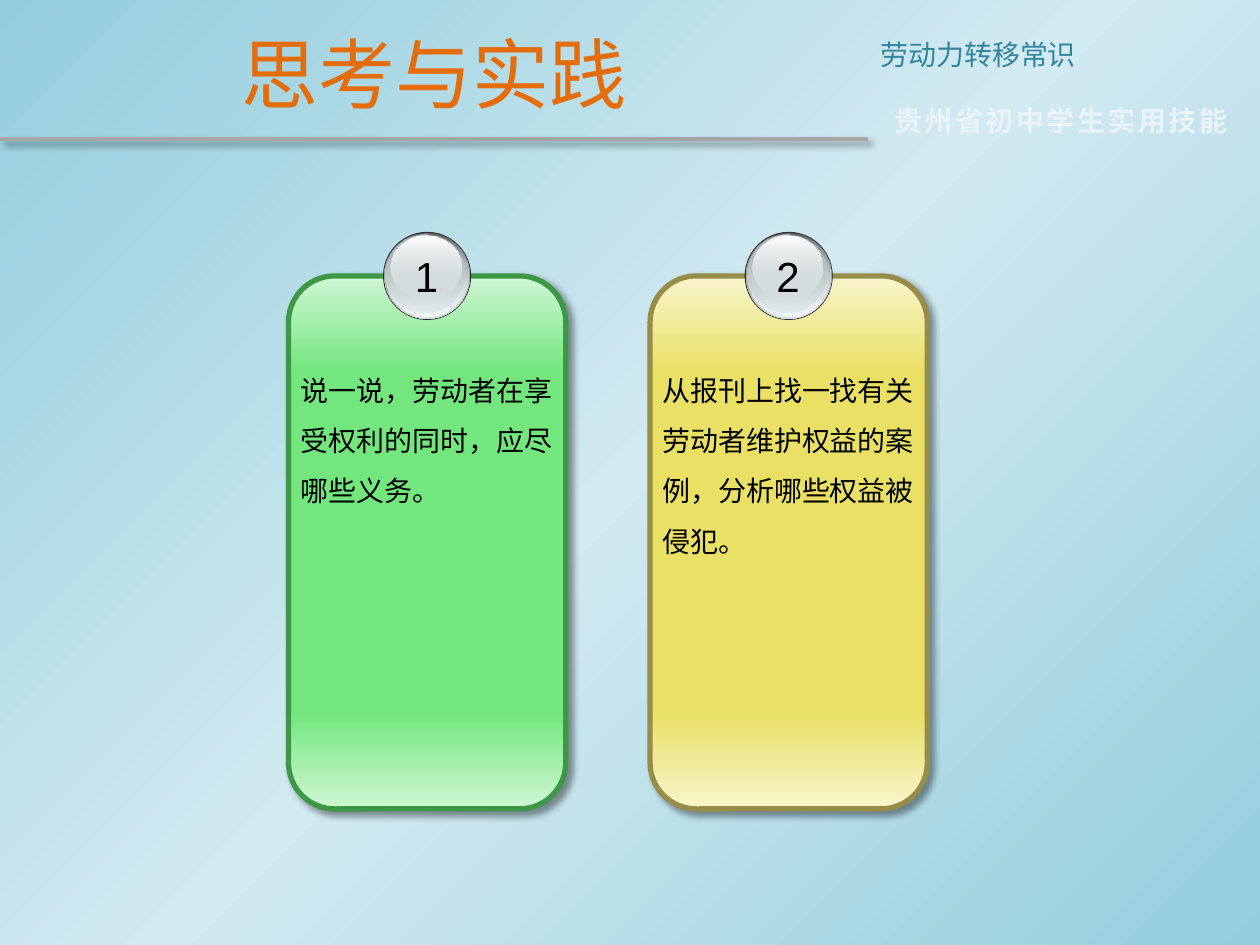
from dataclasses import dataclass

from lxml import etree
from pptx import Presentation
from pptx.dml.color import RGBColor
from pptx.enum.shapes import MSO_CONNECTOR, MSO_SHAPE
from pptx.enum.text import MSO_ANCHOR, MSO_AUTO_SIZE, PP_ALIGN
from pptx.oxml.ns import qn
from pptx.util import Inches, Pt

ROUNDED, OVAL = MSO_SHAPE.ROUNDED_RECTANGLE, MSO_SHAPE.OVAL
STRAIGHT = MSO_CONNECTOR.STRAIGHT
LEFT, CENTER, JUSTIFY = PP_ALIGN.LEFT, PP_ALIGN.CENTER, PP_ALIGN.JUSTIFY
MIDDLE = MSO_ANCHOR.MIDDLE
GROW, FIXED = MSO_AUTO_SIZE.SHAPE_TO_FIT_TEXT, MSO_AUTO_SIZE.NONE

COLS, ROWS = 100, 75
WIDTH, HEIGHT = Inches(10), Inches(7.5)


@dataclass(frozen=True)
class Theme:
    cjk: str = "Noto Sans CJK SC"
    latin: str = "Arial"
    title_size: int = 44
    number_size: int = 24
    body_size: int = 16
    title: str = "E46C0A"
    heading: str = "31859C"
    banner: str = "EAF3F7"
    text: str = "000000"
    rule: str = "A6A6A6"
    rim: str = "333333"
    background: tuple = ((0, "93CDDD"), (50, "D2EAF1"), (100, "93CDDD"))


# Offset from the card's left, then top, width, height and gradient of each layer
BALL_LAYERS = (
    (7.6, 18.5, 6.8, 6.8, ((0, "636869"), (100, "D6E1E2"))),
    (7.7, 18.5, 6.6, 6.6, ((0, "D6E1E2", 0), (100, "F1F5F5"))),
    (7.7, 18.6, 6.3, 6.2, ((0, "AAB2B3"), (100, "D6E1E2", 48))),
    (8.1, 18.7, 5.6, 5.0, ((0, "FFFFFF"), (100, "D6E1E2", 38))),
)

# Edge tint, body colour, border colour, text
CARDS = (
    ("D0F7D4", "73E77E", "3C9844",
     "说一说，劳动者在享受权利的同时，应尽哪些义务。"),
    ("F8F5CC", "E9E065", "978D48",
     "从报刊上找一找有关劳动者维护权益的案例，分析哪些权益被侵犯。"),
)
CARD_LEFT, CARD_STEP, CARD_WIDTH = 22.9, 28.7, 22


def rgb(value):
    return RGBColor.from_string(value)


def add_color(parent, color, alpha=100):
    clr = etree.SubElement(parent, qn("a:srgbClr"), val=color)
    if alpha < 100:
        etree.SubElement(clr, qn("a:alpha"), val=str(alpha * 1000))


def set_gradient(fill, owner, stops, angle=90):
    """Angle runs clockwise; a stop is position, colour and optional opacity."""
    fill.gradient()
    fill.gradient_angle = 360 - angle
    stop_list = owner.find(".//" + qn("a:gsLst"))
    for old in list(stop_list):
        stop_list.remove(old)
    for position, *color in stops:
        stop = etree.SubElement(stop_list, qn("a:gs"), pos=str(position * 1000))
        add_color(stop, *color)


def set_effects(sp, shadow):
    """Call after fill and line, since effects come after them."""
    effects = etree.SubElement(sp._element.spPr, qn("a:effectLst"))
    if shadow:
        outer = etree.SubElement(
            effects, qn("a:outerShdw"), blurRad=str(Pt(4)), dist=str(Pt(3)),
            dir=str(45 * 60000), algn="tl", rotWithShape="0")
        add_color(outer, "000000", 40)


class SlideBuilder:
    def __init__(self, prs, theme):
        self.theme = theme
        self.s = prs.slides.add_slide(prs.slide_layouts[5])
        self.cell_w, self.cell_h = WIDTH / COLS, HEIGHT / ROWS
        background = self.s.background.fill
        set_gradient(background, self.s._element, theme.background, 45)

    def box(self, x, y, w, h):
        return (round(x * self.cell_w), round(y * self.cell_h),
                round(w * self.cell_w), round(h * self.cell_h))

    def fill_text(self, sp, text, size, color, align=LEFT, font=None,
                  bold=False, spacing=None, tracking=0, **frame):
        font = font or self.theme.cjk
        tf = sp.text_frame
        for name, value in frame.items():
            setattr(tf, name, value)
        p = tf.paragraphs[0]
        p.alignment = align
        if spacing:
            p.line_spacing = spacing
        r = p.add_run()
        r.text = text
        formats = {"name": font, "size": Pt(size), "bold": bold}
        for name, value in formats.items():
            setattr(r.font, name, value)
        r.font.color.rgb = rgb(color)
        props = r._r.get_or_add_rPr()
        etree.SubElement(props, qn("a:ea"), typeface=font)
        if tracking:
            props.set("spc", str(round(tracking * 100)))

    def title(self, text, *place):
        sp = self.s.shapes.title
        sp.left, sp.top, sp.width, sp.height = self.box(*place)
        self.fill_text(sp, text, self.theme.title_size, self.theme.title, CENTER,
                       vertical_anchor=MIDDLE, auto_size=FIXED)

    def text(self, text, place, size, color, parent=None, wrap=True, **style):
        sp = (parent or self.s.shapes).add_textbox(*self.box(*place))
        self.fill_text(sp, text, size, color, word_wrap=wrap, auto_size=GROW,
                       **style)

    def rule(self, x1, x2, y):
        start_x, top, end_x, _ = self.box(x1, y, x2, 0)
        line = self.s.shapes.add_connector(STRAIGHT, start_x, top, end_x, top)
        line.line.color.rgb = rgb(self.theme.rule)
        line.line.width = Pt(2.25)
        set_effects(line, shadow=True)

    def shape(self, parent, kind, place, fill, border=None, shadow=False):
        sp = parent.add_shape(kind, *self.box(*place))
        if isinstance(fill, str):
            sp.fill.solid()
            sp.fill.fore_color.rgb = rgb(fill)
        else:
            set_gradient(sp.fill, sp._element, fill)
        if border:
            sp.line.color.rgb = rgb(border)
            sp.line.width = Pt(3)
        else:
            sp.line.fill.background()
        set_effects(sp, shadow)

    def ball(self, parent, x, number):
        self.shape(parent, OVAL, (x + 7.5, 18.4, 7, 7), self.theme.rim)
        for dx, y, w, h, stops in BALL_LAYERS:
            self.shape(parent, OVAL, (x + dx, y, w, h), stops)
        self.text(str(number), (x + 9, 19.4, 3.9, 5), self.theme.number_size,
                  self.theme.text, parent, wrap=False, align=CENTER,
                  font=self.theme.latin)

    def card(self, x, number, edge, body, border, text):
        parent = self.s.shapes.add_group_shape().shapes
        stops = ((0, edge), (18, body), (82, body), (100, edge))
        self.shape(parent, ROUNDED, (x, 21.9, CARD_WIDTH, 42.3), stops, border,
                   shadow=True)
        self.text(text, (x, 27.8, CARD_WIDTH + 0.1, 17.2), self.theme.body_size,
                  self.theme.text, parent, spacing=1.5)
        self.ball(parent, x, number)


def main():
    prs = Presentation()
    prs.slide_width, prs.slide_height = WIDTH, HEIGHT
    theme = Theme()
    slide = SlideBuilder(prs, theme)
    slide.rule(0, 68.9, 11)
    slide.text("劳动力转移常识", (68.9, 2.5, 31.1, 3.7), theme.body_size,
               theme.heading, align=JUSTIFY)
    slide.text("贵州省初中学生实用技能", (70, 7.7, 29, 3.7), theme.body_size,
               theme.banner, bold=True, tracking=1.5)
    slide.title("思考与实践", 0, 0.7, 68.9, 10.2)
    for i, card in enumerate(CARDS):
        slide.card(CARD_LEFT + i * CARD_STEP, i + 1, *card)
    prs.save("out.pptx")


if __name__ == "__main__":
    main()
